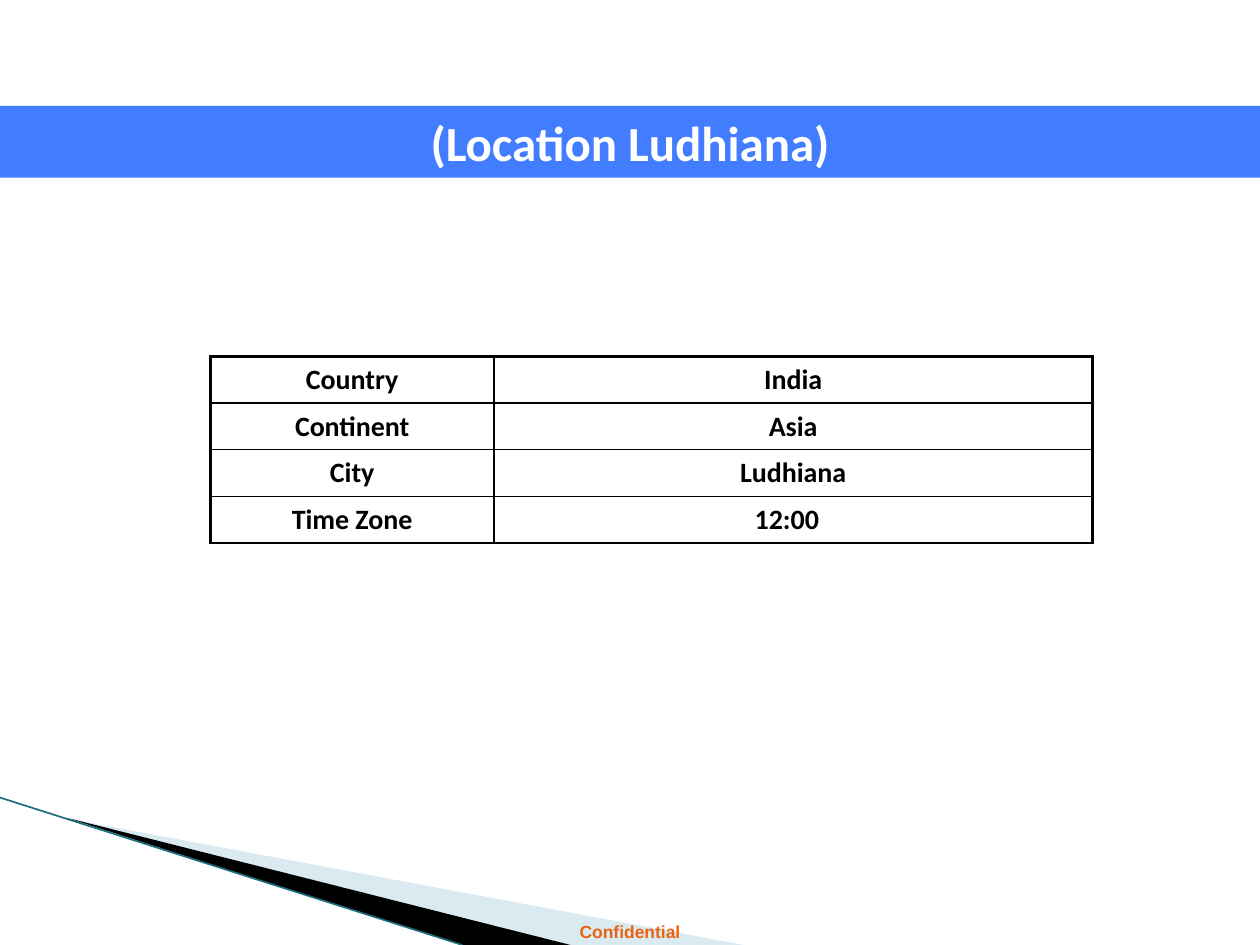
from dataclasses import dataclass
from lxml.etree import SubElement
from pptx import Presentation
from pptx.dml.color import RGBColor
from pptx.enum.shapes import MSO_CONNECTOR
from pptx.enum.text import MSO_ANCHOR, MSO_AUTO_SIZE, PP_ALIGN
from pptx.oxml.ns import qn
from pptx.util import Inches, Pt

# Content
TITLE = "(Location Ludhiana)"
FOOTER = "Confidential"
ROWS = [
    ("Country", "India"),
    ("Continent", "Asia"),
    ("City", "Ludhiana"),
    ("Time Zone", "12:00"),
]


@dataclass(frozen=True)
class Theme:
    font: str = "Calibri"
    small: str = "Arial"
    band: str = "437DFF"
    white: str = "FFFFFF"
    ink: str = "000000"
    pale: str = "A0CBDC"
    edge: str = "1B6E80"
    note: str = "EB6312"
    head_pt: int = 28
    cell_pt: int = 16
    note_pt: int = 10
    outer: float = 1.5
    inner: float = 1


LOOK = Theme()
WIDE, HIGH = 10, 7.5

# Corner wedges: points, fill, opacity in percent
WEDGES = [
    ([(0.55, 6.5), (5.9, HIGH), (4.53, HIGH)], LOOK.pale, 40),
    ([(0.53, 6.49), (4.53, HIGH), (3.66, HIGH)], LOOK.ink, 100),
]

# Table grid
LEFT, TOP, ROW = 1.67, 2.83, 0.37
COLS = (2.25, 4.75)


def write(frame, text, size, color, font=LOOK.font):
    frame.text = text
    frame.word_wrap = True
    para = frame.paragraphs[0]
    para.alignment = PP_ALIGN.CENTER
    face = para.font
    face.size, face.name, face.bold = Pt(size), font, True
    face.color.rgb = RGBColor.from_string(color)


def place(shape, x, y, w, h):
    shape.left, shape.top = Inches(x), Inches(y)
    shape.width, shape.height = Inches(w), Inches(h)


def wedge(slide, points, color, alpha):
    start, *rest = [(Inches(x), Inches(y)) for x, y in points]
    pen = slide.shapes.build_freeform(*start)
    pen.add_line_segments(rest, close=True)
    shape = pen.convert_to_shape()
    shape.shadow.inherit = False
    shape.line.fill.background()
    shape.fill.solid()
    shape.fill.fore_color.rgb = RGBColor.from_string(color)
    if alpha < 100:
        tint = shape.fill._xPr.find(qn("a:solidFill"))[0]
        SubElement(tint, qn("a:alpha"), val=str(alpha * 1000))


def border(cell, sides):
    props = cell._tc.get_or_add_tcPr()
    for side, width in sides.items():
        line = SubElement(props, qn(f"a:ln{side}"), w=str(Pt(width)))
        fill = SubElement(line, qn("a:solidFill"))
        SubElement(fill, qn("a:srgbClr"), val=LOOK.ink)


def grid(slide):
    count = len(ROWS)
    table = slide.shapes.add_table(
        count, len(COLS), Inches(LEFT), Inches(TOP),
        Inches(sum(COLS)), Inches(ROW * count)).table
    table.first_row = table.horz_banding = False
    for col, width in zip(table.columns, COLS):
        col.width = Inches(width)
    for r, row in enumerate(ROWS):
        for c, text in enumerate(row):
            cell = table.cell(r, c)
            write(cell.text_frame, text, LOOK.cell_pt, LOOK.ink)
            cell.vertical_anchor = MSO_ANCHOR.MIDDLE
            rims = {"L": c == 0, "R": c == len(COLS) - 1,
                    "T": r == 0, "B": r == count - 1}
            border(cell, {side: LOOK.outer if rim else LOOK.inner
                          for side, rim in rims.items()})
            cell.fill.background()
    # The time sits slightly left of centre
    table.cell(count - 1, 1).margin_right = Inches(0.2)


def main():
    deck = Presentation()
    deck.slide_width, deck.slide_height = Inches(WIDE), Inches(HIGH)
    slide = deck.slides.add_slide(deck.slide_layouts[5])

    # Corner decoration
    for points, color, alpha in WEDGES:
        wedge(slide, points, color, alpha)
    edge = slide.shapes.add_connector(
        MSO_CONNECTOR.STRAIGHT, 0, Inches(6.33), Inches(3.67), Inches(HIGH))
    edge.line.color.rgb = RGBColor.from_string(LOOK.edge)
    edge.line.width = Pt(0.95)
    SubElement(edge._element.spPr, qn("a:effectLst"))

    # Footer
    foot = slide.shapes.add_textbox(0, 0, 0, 0)
    place(foot, 0, 7.26, WIDE, 0.27)
    write(foot.text_frame, FOOTER, LOOK.note_pt, LOOK.note, LOOK.small)

    # Title band
    title = slide.shapes.title
    place(title, 0, 0.84, WIDE, 0.57)
    title.fill.solid()
    title.fill.fore_color.rgb = RGBColor.from_string(LOOK.band)
    write(title.text_frame, TITLE, LOOK.head_pt, LOOK.white)
    title.text_frame.auto_size = MSO_AUTO_SIZE.NONE
    title.text_frame.vertical_anchor = MSO_ANCHOR.MIDDLE

    # Location table
    grid(slide)
    deck.save("out.pptx")


if __name__ == "__main__":
    main()
